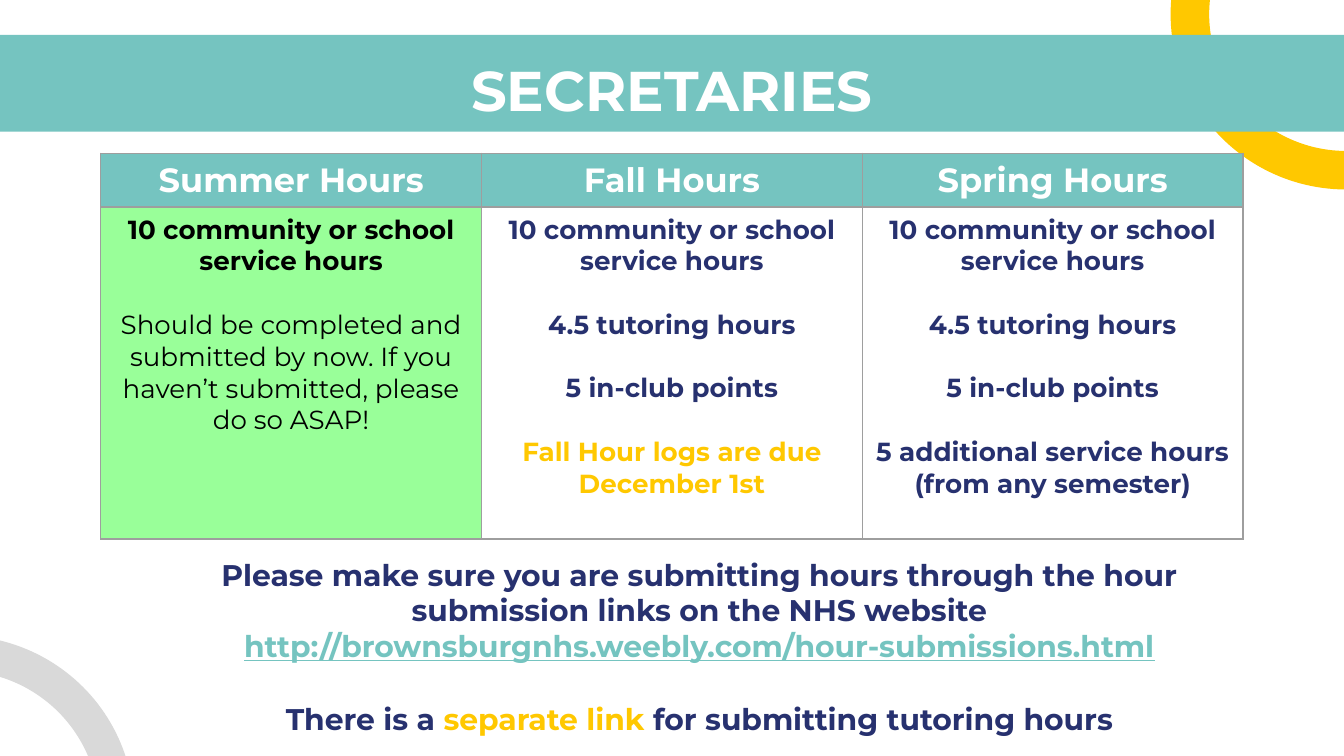
from lxml import etree
from pptx import Presentation
from pptx.dml.color import RGBColor
from pptx.enum.shapes import MSO_SHAPE as SHAPE
from pptx.enum.text import PP_ALIGN as ALIGN, MSO_ANCHOR as ANCHOR
from pptx.oxml.ns import qn
from pptx.util import Inches, Pt

FONT = "Montserrat"
TEAL, YELLOW, NAVY = "75C4C0", "FFC800", "27316F"
WHITE, BLACK, GRAY, GREEN, BORDER = "FFFFFF", "000000", "D9D9D9", "99FF99", "9E9E9E"

SERVICE = "10 community or school service hours"
SUMMER_NOTE = ("Should be completed and submitted by now. "
               "If you haven’t submitted, please do so ASAP!")
SEMESTER = [(SERVICE, {}), ("4.5 tutoring hours", {}), ("5 in-club points", {})]
COLUMNS = [
    ("Summer Hours", GREEN, [(SERVICE, {"color": BLACK}),
                             (SUMMER_NOTE, {"color": BLACK, "bold": False})]),
    ("Fall Hours", None, SEMESTER + [("Fall Hour logs are due December 1st", {"color": YELLOW})]),
    ("Spring Hours", None, SEMESTER + [("5 additional service hours (from any semester)", {})]),
]


def rgb(color):
    return RGBColor.from_string(color)


def add_run(p, text, size=14, color=NAVY, bold=True, underline=False):
    r = p.add_run()
    r.text = text
    font = r.font
    font.name, font.size, font.bold = FONT, Pt(size), bold
    font.underline = underline
    font.color.rgb = rgb(color)


def add_paragraph(tf, first=False, gap=0):
    p = tf.paragraphs[0] if first else tf.add_paragraph()
    p.alignment = ALIGN.CENTER
    if gap and not first:
        p.space_before = Pt(gap)
    return p


def add_shape(slide, kind, box, color, rotation=0, adjustments=()):
    sp = slide.shapes.add_shape(kind, *map(Inches, box))
    sp.shadow.inherit = False
    sp.fill.solid()
    sp.fill.fore_color.rgb = rgb(color)
    sp.line.fill.background()
    sp.rotation = rotation
    for i, value in enumerate(adjustments):
        sp.adjustments[i] = value


def add_text_box(slide, box, margin):
    tf = slide.shapes.add_textbox(*map(Inches, box)).text_frame
    tf.word_wrap = True
    tf.margin_top = tf.margin_bottom = Inches(margin)
    return tf


def style_cell(cell, fill):
    cell.margin_left = cell.margin_right = Inches(0.09)
    cell.margin_top = cell.margin_bottom = Inches(0.05)
    cell.vertical_anchor = ANCHOR.TOP
    tc_pr = cell._tc.get_or_add_tcPr()
    for side in ("lnL", "lnR", "lnT", "lnB"):
        line = etree.SubElement(tc_pr, qn(f"a:{side}"), w=str(Pt(0.75)))
        solid = etree.SubElement(line, qn("a:solidFill"))
        etree.SubElement(solid, qn("a:srgbClr"), val=BORDER)
    if fill:
        cell.fill.solid()
        cell.fill.fore_color.rgb = rgb(fill)
    else:
        cell.fill.background()


def add_hours_table(slide):
    box = map(Inches, (0.75, 1.14, 8.5, 2.87))
    table = slide.shapes.add_table(2, len(COLUMNS), *box).table
    table.rows[0].height = Inches(0.4)
    table.rows[1].height = Inches(2.47)
    for i, (heading, fill, items) in enumerate(COLUMNS):
        head, body = table.cell(0, i), table.cell(1, i)
        style_cell(head, TEAL)
        style_cell(body, fill)
        add_run(add_paragraph(head.text_frame, first=True), heading, size=18, color=WHITE)
        for j, (text, style) in enumerate(items):
            add_run(add_paragraph(body.text_frame, first=j == 0, gap=17), text, **style)


def add_title(slide):
    tf = add_text_box(slide, (-0.19, 0.31, 10.38, 0.63), 0.1)
    add_run(add_paragraph(tf, first=True), "SECRETARIES", size=30, color=WHITE)


def add_submission_note(slide):
    tf = add_text_box(slide, (1.16, 4.09, 8.09, 1.45), 0.05)
    add_run(add_paragraph(tf, first=True),
            "Please make sure you are submitting hours through "
            "the hour submission links on the NHS website", size=16)
    add_run(add_paragraph(tf), "http://brownsburgnhs.weebly.com/hour-submissions.html",
            size=16, color=TEAL, underline=True)
    p = add_paragraph(tf, gap=19.5)
    add_run(p, "There is a ", size=16)
    add_run(p, "separate link", size=16, color=YELLOW)
    add_run(p, " for submitting tutoring hours", size=16)


def main():
    prs = Presentation()
    prs.slide_width, prs.slide_height = Inches(10), Inches(10 * 9 / 16)
    slide = prs.slides.add_slide(prs.slide_layouts[6])
    add_shape(slide, SHAPE.BLOCK_ARC, (8.71, -1.2, 2.61, 2.61), YELLOW, 270, (108.21, 165.56, 0.11))
    add_shape(slide, SHAPE.RECTANGLE, (-0.17, 0.26, 10.34, 0.72), TEAL)
    add_shape(slide, SHAPE.BLOCK_ARC, (-1.61, 4.73, 2.61, 2.61), GRAY, 345, (175.07, 215.56, 0.1))
    add_title(slide)
    add_hours_table(slide)
    add_submission_note(slide)
    prs.save("out.pptx")


if __name__ == "__main__":
    main()
